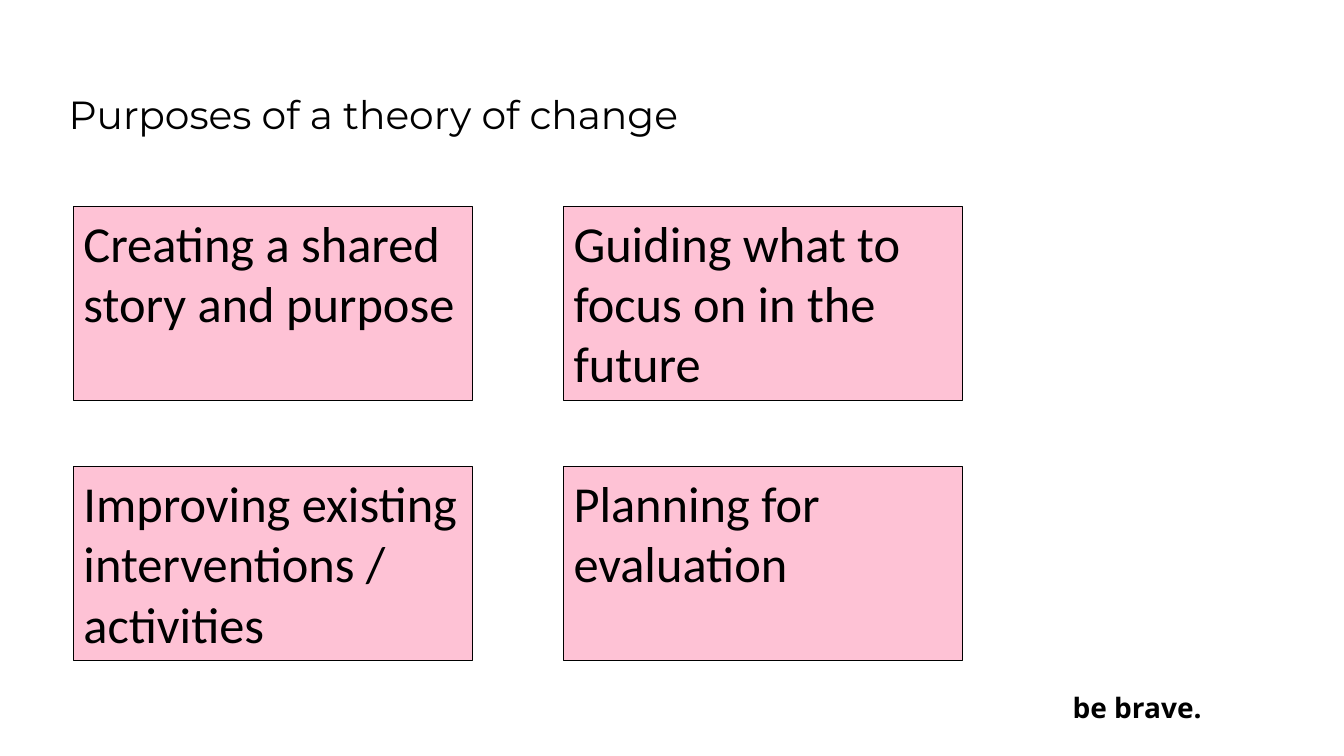
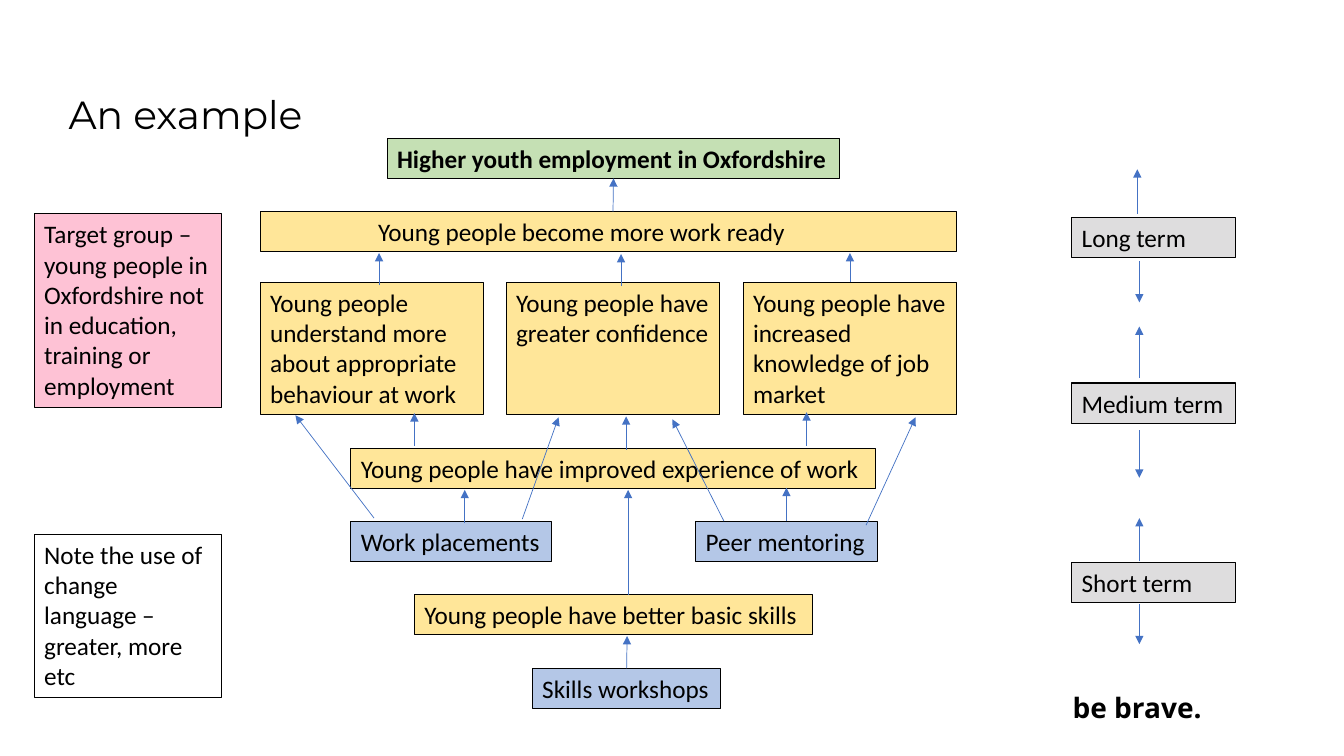
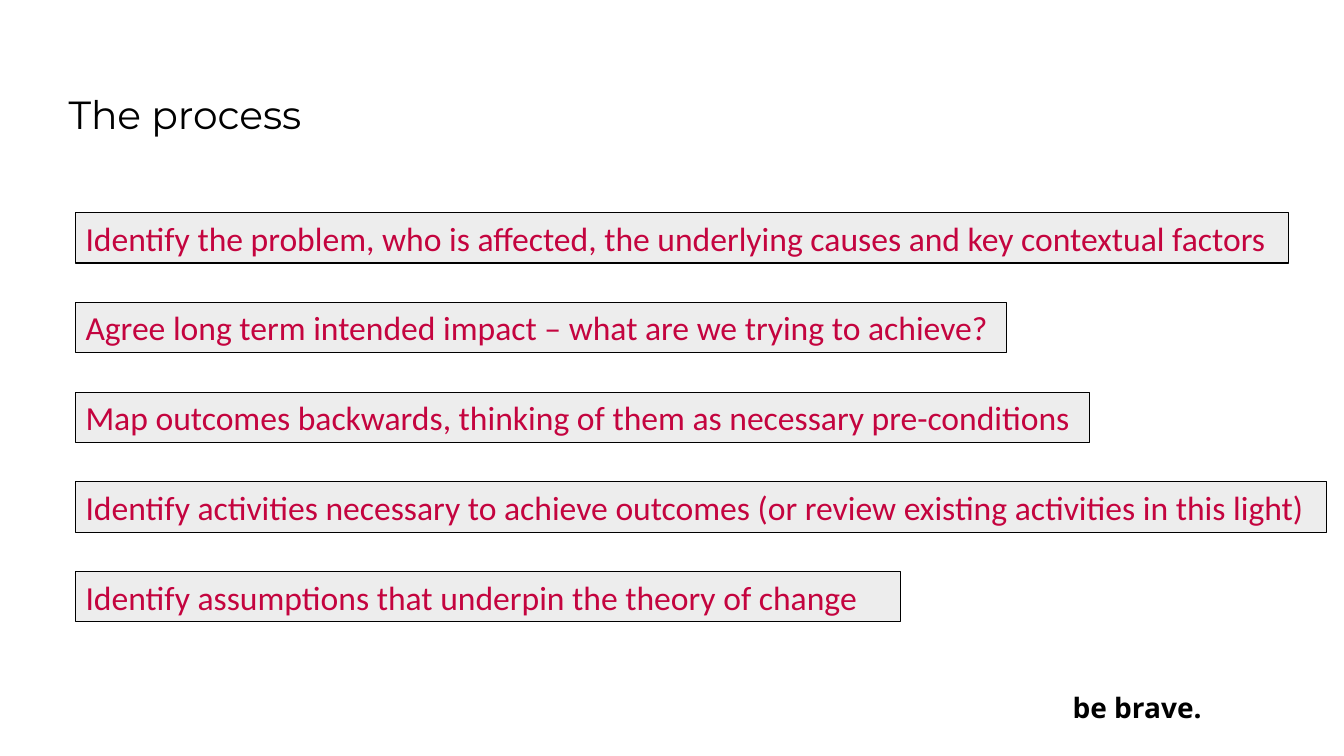
"""Three slides on theories of change: purposes, an example and the process."""
from lxml import etree
from pptx import Presentation
from pptx import util as u
from pptx.dml.color import RGBColor
from pptx.enum import shapes, text
from pptx.oxml import ns

INK = {
    "black": "000000", "pink": "FEC2D5", "green": "C5E0B4", "gold": "FFE699",
    "blue": "B4C7E7", "grey": "DEDDDE", "pale": "EDEDED", "red": "C4043F",
    "arrow": "4472C4",
}


def box(slide, place, words, fill, size, ink="black", bold=False, inset=0.1):
    rect = slide.shapes.add_shape(
        shapes.MSO_SHAPE.RECTANGLE, *[u.Inches(n) for n in place])
    rect.shadow.inherit = False
    if fill:
        rect.fill.solid()
        rect.fill.fore_color.rgb = RGBColor.from_string(INK[fill])
    else:
        rect.fill.background()
    rect.line.color.rgb = RGBColor.from_string(INK["black"])
    rect.line.width = u.Pt(0.75)
    frame = rect.text_frame
    frame.word_wrap = True
    frame.margin_left = u.Inches(inset)
    frame.vertical_anchor = text.MSO_ANCHOR.TOP
    para = frame.paragraphs[0]
    para.alignment = text.PP_ALIGN.LEFT
    run = para.add_run()
    run.text = words
    run.font.name = "Calibri"
    run.font.size = u.Pt(size)
    run.font.bold = bold
    run.font.color.rgb = RGBColor.from_string(INK[ink])
    return rect


def arrow(slide, *ends):
    line = slide.shapes.add_connector(
        shapes.MSO_CONNECTOR.STRAIGHT, *[u.Inches(n) for n in ends])
    line.line.color.rgb = RGBColor.from_string(INK["arrow"])
    line.line.width = u.Pt(0.5)
    props = line.element.spPr
    tail = etree.SubElement(props.find(ns.qn("a:ln")), ns.qn("a:tailEnd"))
    tail.set("type", "triangle")
    etree.SubElement(props, ns.qn("a:effectLst"))
    return line


deck = Presentation()
deck.slide_width = u.Inches(13.33)
deck.slide_height = u.Inches(7.5)
layout = deck.slide_layouts[5]

style = deck.slide_master.element.find(".//" + ns.qn("p:titleStyle"))
level = style.find(ns.qn("a:lvl1pPr"))
level.set("algn", "l")
space = etree.Element(ns.qn("a:lnSpc"))
etree.SubElement(space, ns.qn("a:spcPct")).set("val", "90000")
level.insert(0, space)
face = level.find(ns.qn("a:defRPr"))
face.set("sz", "2800")
face.find(ns.qn("a:latin")).set("typeface", "Montserrat")

head = layout.placeholders[0]
head.left, head.top = u.Inches(0.6), u.Inches(0.71)
head.width, head.height = u.Inches(11.5), u.Inches(0.9)
frame = head.text_frame
frame.auto_size = text.MSO_AUTO_SIZE.NONE
frame.vertical_anchor = text.MSO_ANCHOR.MIDDLE
frame.margin_left = frame.margin_right = u.Inches(0.08)
frame.margin_top = frame.margin_bottom = 0

slides = []
for title in ("Purposes of a theory of change", "An example", "The process"):
    slide = deck.slides.add_slide(layout)
    slide.shapes.title.text_frame.paragraphs[0].add_run().text = title
    slides.append(slide)
aims, tree, steps = slides

foot = aims.shapes.add_textbox(
    u.Inches(10.54), u.Inches(6.8), u.Inches(1.48), u.Inches(0.44))
foot.text_frame.word_wrap = False
run = foot.text_frame.paragraphs[0].add_run()
run.text = "be brave."
run.font.name = "Noto Sans"
run.font.size = u.Pt(20)
run.font.bold = True
run.font.color.rgb = RGBColor.from_string(INK["black"])
layout.shapes.element.append(foot.element)

goals = (
    "Creating a shared story and purpose",
    "Guiding what to focus on in the future",
    "Improving existing interventions / activities",
    "Planning for evaluation",
)
for i, words in enumerate(goals):
    row, col = divmod(i, 2)
    box(aims, (0.73 + 4.86 * col, 2.05 + 2.58 * row, 3.96, 1.92),
        words, "pink", 36)

goal = box(tree, (3.84, 1.37, 4.49, 0.4),
           "Higher youth employment in Oxfordshire", "green", 18, bold=True)
box(tree, (2.58, 2.1, 6.91, 0.4), "Young people become more work ready",
    "gold", 18, inset=1.17)
market = box(tree, (7.37, 2.8, 2.12, 1.31),
             "Young people have increased knowledge of job market", "gold", 18)
mentor = box(tree, (6.9, 5.17, 1.8, 0.4), "Peer mentoring", "blue", 18)
skills = box(tree, (5.28, 6.63, 1.87, 0.4), "Skills workshops", "blue", 18)
for place, words, fill in (
    ((0.34, 2.12, 1.86, 1.92), "Target group – young people in Oxfordshire "
     "not in education, training or employment", "pink"),
    ((2.58, 2.8, 2.22, 1.31), "Young people understand more about "
     "appropriate behaviour at work", "gold"),
    ((5.02, 2.8, 2.12, 1.31), "Young people have greater confidence", "gold"),
    ((3.48, 4.45, 5.2, 0.4),
     "Young people have improved experience of work", "gold"),
    ((4.11, 5.9, 3.95, 0.4), "Young people have better basic skills", "gold"),
    ((3.48, 5.17, 1.99, 0.4), "Work placements", "blue"),
    ((0.34, 5.3, 1.86, 1.62),
     "Note the use of change language – greater, more etc", None),
    ((10.63, 2.16, 1.62, 0.4), "Long term", "grey"),
    ((10.63, 3.8, 1.62, 0.4), "Medium term", "grey"),
    ((10.63, 5.58, 1.62, 0.4), "Short term", "grey"),
):
    box(tree, place, words, fill, 18)

arrow(tree, 6.08, 2.1, 6.08, 1.77).end_connect(goal, 2)
arrow(tree, 8.43, 2.8, 8.43, 2.51).begin_connect(market, 0)
arrow(tree, 7.8, 5.17, 7.8, 4.84).begin_connect(mentor, 0)
arrow(tree, 6.22, 6.63, 6.22, 6.31).begin_connect(skills, 0)
for x, low, high in (
    (3.76, 2.83, 2.51), (6.16, 2.84, 2.52), (4.11, 4.42, 4.1),
    (6.21, 4.46, 4.13), (8, 4.42, 4.09), (4.61, 5.19, 4.86),
    (6.23, 5.9, 4.86),
    (11.28, 2.12, 1.68), (11.3, 2.59, 3), (11.3, 3.75, 3.24),
    (11.3, 4.27, 4.74), (11.3, 5.57, 5.14), (11.3, 5.99, 6.39),
):
    arrow(tree, x, low, x, high)
for ends in (
    (3.71, 5.14, 2.93, 4.12), (7.18, 5.17, 6.67, 4.16),
    (8.59, 5.21, 9.08, 4.14), (5.18, 5.15, 5.54, 4.14),
):
    arrow(tree, *ends)

tasks = (
    (12.03, "Identify the problem, who is affected, the underlying causes "
     "and key contextual factors"),
    (9.23, "Agree long term intended impact – what are we trying to achieve?"),
    (10.06, "Map outcomes backwards, thinking of them as necessary "
     "pre-conditions"),
    (12.41, "Identify activities necessary to achieve outcomes (or review "
     "existing activities in this light)"),
    (8.18, "Identify assumptions that underpin the theory of change"),
)
for i, (wide, words) in enumerate(tasks):
    box(steps, (0.75, 2.11 + 0.89 * i, wide, 0.5), words, "pale", 24, "red")

deck.save("out.pptx")
